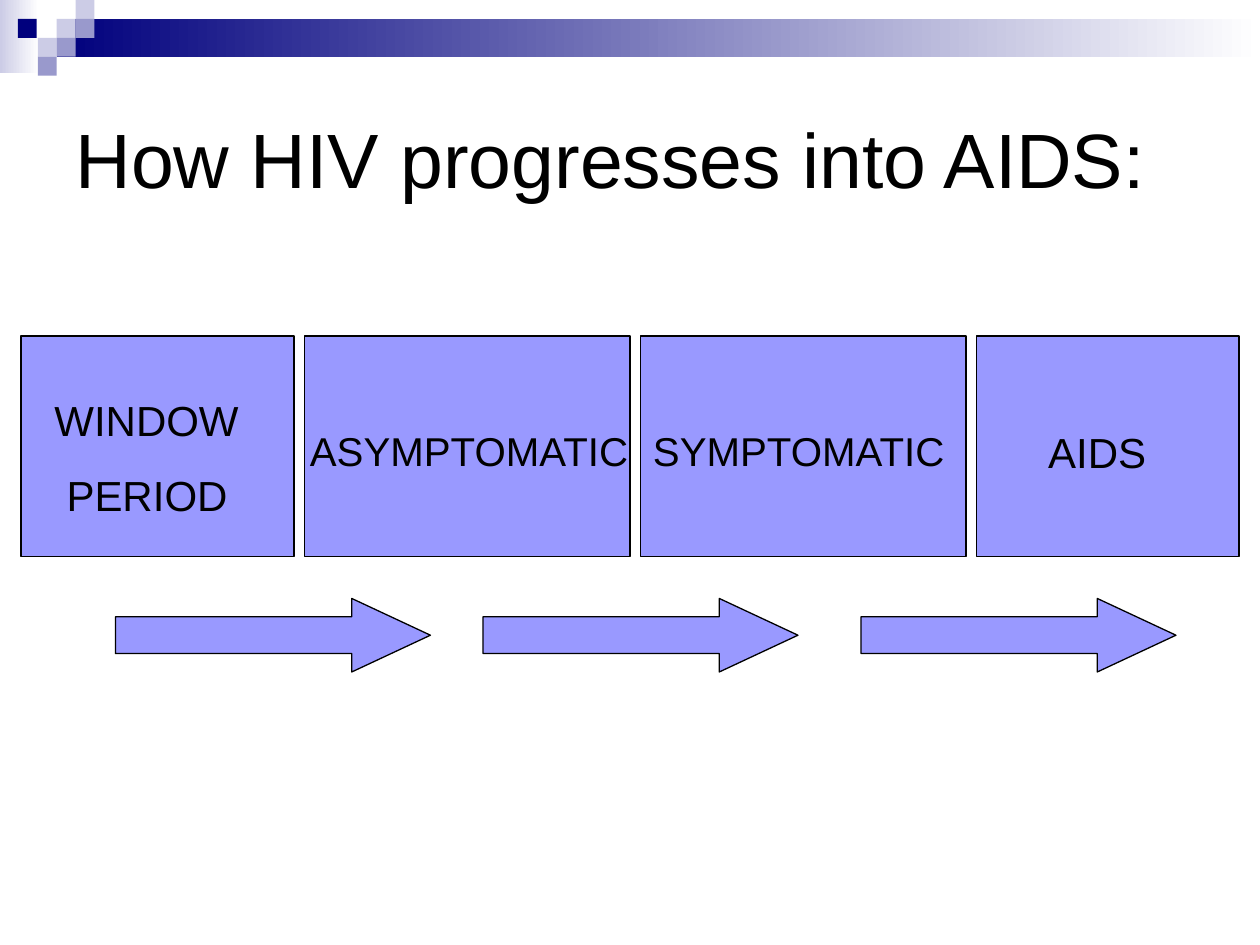
from pptx import Presentation
from pptx.dml.color import RGBColor
from pptx.enum.shapes import MSO_SHAPE
from pptx.enum.text import MSO_ANCHOR, PP_ALIGN
from pptx.util import Pt

RECT, ARROW = MSO_SHAPE.RECTANGLE, MSO_SHAPE.RIGHT_ARROW
LEFT, CENTER = PP_ALIGN.LEFT, PP_ALIGN.CENTER
TOP, MIDDLE = MSO_ANCHOR.TOP, MSO_ANCHOR.MIDDLE

# Content
TITLE = "How HIV progresses into AIDS:"
# stage width, label box (left, top, width, height), type size, lines with alignment
STAGES = [
    (156, (24, 222, 120, 79), "label", [("WINDOW", LEFT), ("PERIOD", CENTER)]),
    (186, (170, 240, 222, 34.5), "long_label", [("ASYMPTOMATIC", LEFT)]),
    (186, (366, 240, 192, 34.5), "long_label", [("SYMPTOMATIC", LEFT)]),
    (150, (570, 240, 114, 36), "label", [("AIDS", CENTER)]),
]
ARROW_LEFTS = [66, 276, 492]

# Theme
THEME = {
    "font": "Arial",
    "sizes": {"title": 44, "label": 24, "long_label": 23},
    "text": "000000", "line": "000000", "stage": "9999FF",
    "navy": "00007D", "mid": "9999CC", "pale": "CCCCE6", "white": "FFFFFF",
}

# Header ornament: bands (box, start colour) and squares (column, row, colour)
CELL = 10.8
BANDS = [((0, 0, 22.3, 41.8), "pale"), ((32.4, CELL, 687.6, 21.6), "navy")]
SQUARES = [(3, 1, "pale"), (4, 0, "pale"), (4, 1, "mid"), (2, 2, "pale"),
           (0.94, 1, "navy"), (3, 2, "mid"), (2, 3, "mid")]

# Layout
STAGE_LEFT, STAGE_TOP, STAGE_HEIGHT, STAGE_GAP = 12, 192, 126, 6
ARROW_TOP, ARROW_WIDTH, ARROW_HEIGHT = 342, 180, 42


def color(name):
    return RGBColor.from_string(THEME[name])


def add_shape(s, kind, box, fill=None, line=None):
    sp = s.shapes.add_shape(kind, *map(Pt, box))
    sp.shadow.inherit = False
    if fill:
        sp.fill.solid()
        sp.fill.fore_color.rgb = color(fill)
    if line:
        sp.line.color.rgb = color(line)
        sp.line.width = Pt(0.75)
    else:
        sp.line.fill.background()
    return sp


def add_band(s, box, start):
    sp = add_shape(s, RECT, box)
    sp.fill.gradient()
    sp.fill.gradient_angle = 0
    for stop, name, position in zip(sp.fill.gradient_stops, (start, "white"), (0, 1)):
        stop.color.rgb = color(name)
        stop.position = position


def write(tf, lines, size, anchor):
    tf.word_wrap = True
    tf.vertical_anchor = anchor
    points = THEME["sizes"][size]
    for i, (text, align) in enumerate(lines):
        p = tf.add_paragraph() if i else tf.paragraphs[0]
        p.alignment = align
        p.space_before = Pt(round(points * 0.57, 1) if i else 0)
        r = p.add_run()
        r.text = text
        r.font.name = THEME["font"]
        r.font.size = Pt(points)
        r.font.color.rgb = color("text")


prs = Presentation()
prs.slide_width, prs.slide_height = Pt(720), Pt(540)
s = prs.slides.add_slide(prs.slide_layouts[5])

# Header
for box, start in BANDS:
    add_band(s, box, start)
for column, row, fill in SQUARES:
    add_shape(s, RECT, (column * CELL, row * CELL, CELL, CELL), fill)

# Title
title = s.shapes.title
title.left, title.top, title.width, title.height = map(Pt, (36, 36, 648, 108))
write(title.text_frame, [(TITLE, LEFT)], "title", MIDDLE)

# Stage boxes, then their labels on top
left = STAGE_LEFT
for width, *_ in STAGES:
    add_shape(s, RECT, (left, STAGE_TOP, width, STAGE_HEIGHT), "stage", "line")
    left += width + STAGE_GAP
for _, box, size, lines in STAGES:
    label = s.shapes.add_textbox(*map(Pt, box))
    write(label.text_frame, lines, size, TOP)

# Progress arrows
for left in ARROW_LEFTS:
    sp = add_shape(s, ARROW, (left, ARROW_TOP, ARROW_WIDTH, ARROW_HEIGHT), "stage", "line")
    sp.adjustments[0], sp.adjustments[1] = 0.5, 1.07

prs.save("out.pptx")
